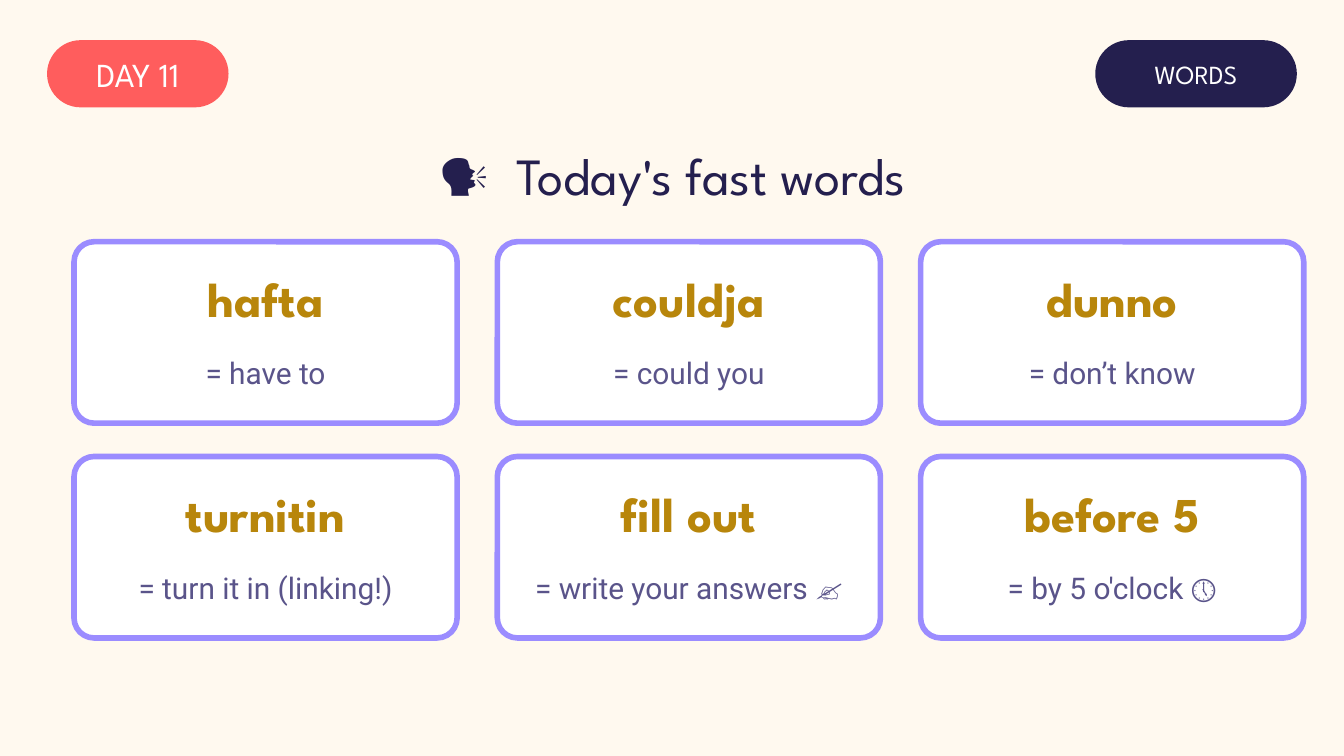
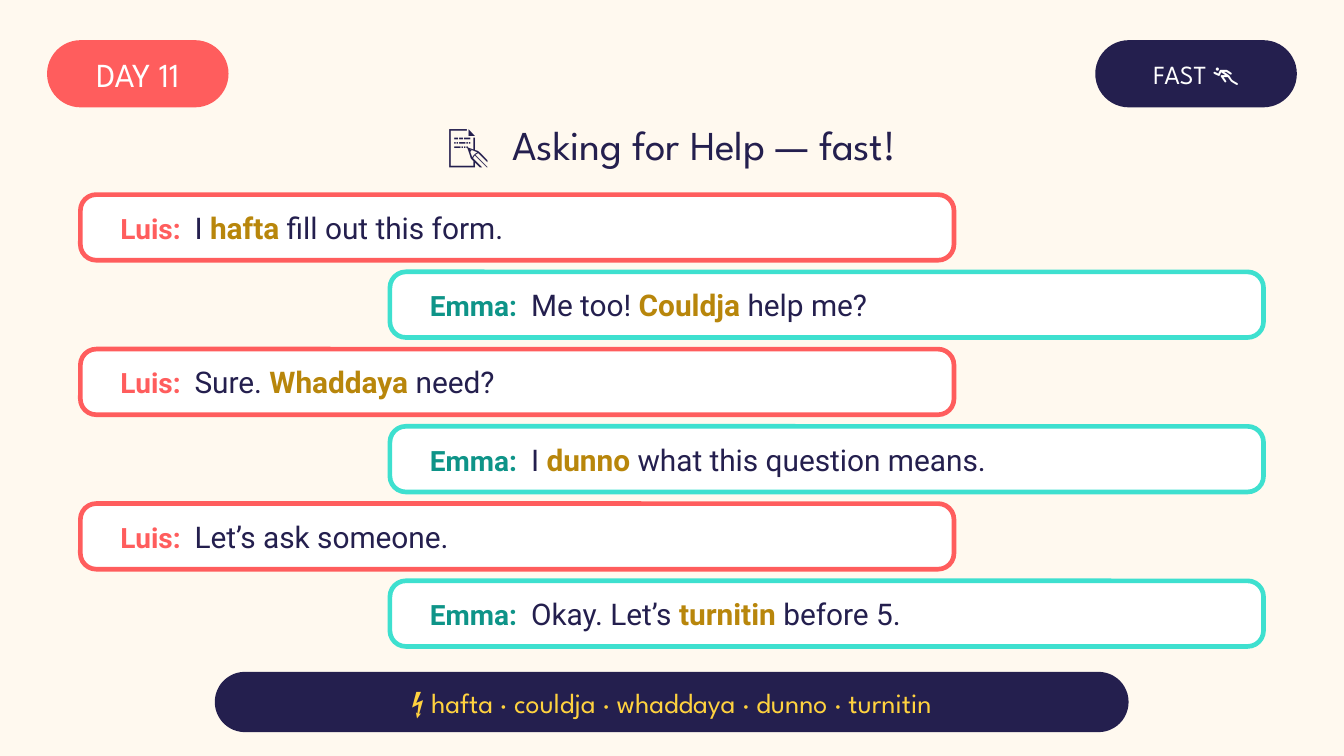
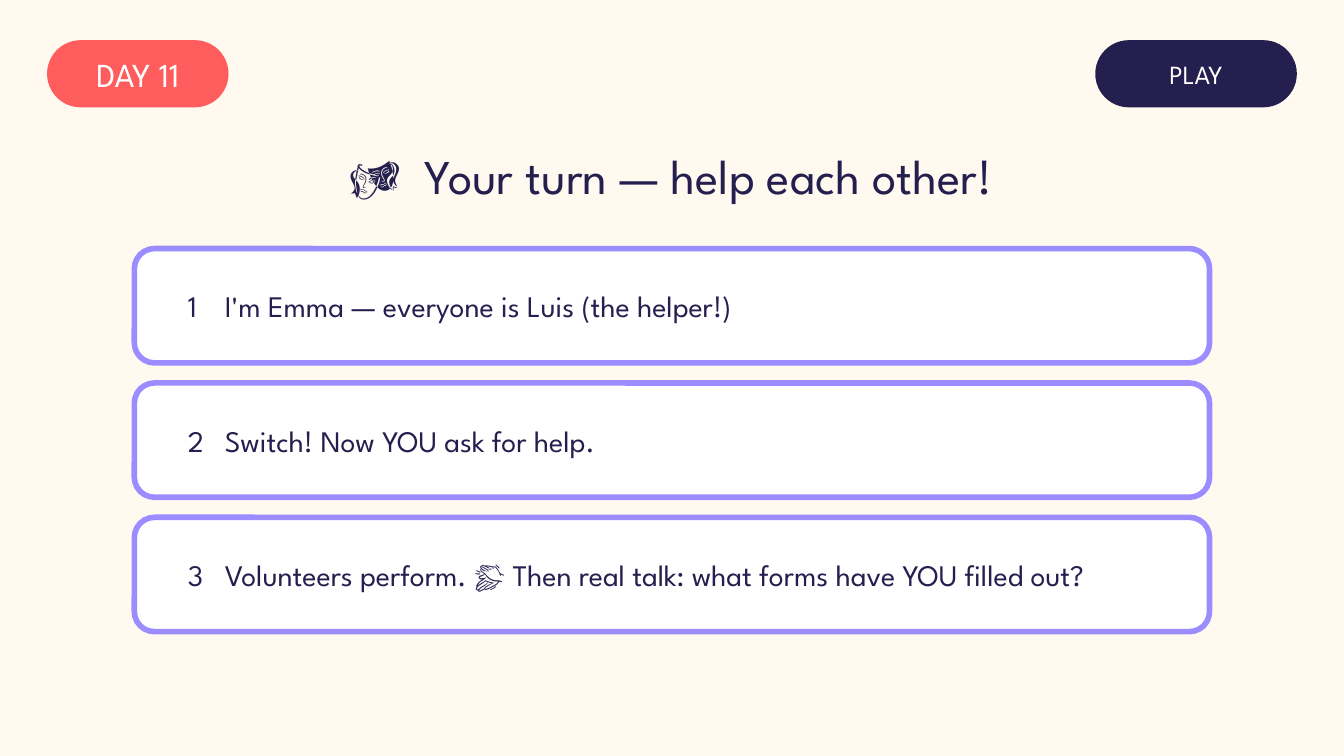
from lxml import etree
from pptx import Presentation
from pptx import util as u
from pptx.dml.color import RGBColor
from pptx.enum import shapes, text
from pptx.oxml.ns import qn

CREAM = RGBColor(0xFF, 0xF9, 0xEF)
WHITE = RGBColor(0xFF, 0xFF, 0xFF)
CORAL = RGBColor(0xFF, 0x5D, 0x5D)
NAVY = RGBColor(0x24, 0x1F, 0x4E)
LILAC = RGBColor(0x9B, 0x8C, 0xFF)
GOLD = RGBColor(0xB8, 0x86, 0x0B)
YELLOW = RGBColor(0xFF, 0xD2, 0x3F)
PURPLE = RGBColor(0x5A, 0x54, 0x8A)
AQUA = RGBColor(0x3E, 0xE0, 0xCF)
TEAL = RGBColor(0x0E, 0x94, 0x88)

HEADING_FONT = "League Spartan"
BODY_FONT = "Roboto"
CENTER = text.PP_ALIGN.CENTER
LEFT = text.PP_ALIGN.LEFT
CORNER_RADIUS = 0.38
ICON_GAP = 700

WORDS = [
    ("hafta", "= have to"),
    ("couldja", "= could you"),
    ("dunno", "= don’t know"),
    ("turnitin", "= turn it in (linking!)"),
    ("fill out", "= write your answers ✍️"),
    ("before 5", "= by 5 o'clock 🕔"),
]
SPEAKERS = {
    "Luis": (1.52, CORAL, CORAL, 1.4),
    "Emma": (7.37, AQUA, TEAL, 1.91),
}
DIALOGUE = [
    ("Luis", "I *hafta* fill out this form."),
    ("Emma", "Me too! *Couldja* help me?"),
    ("Luis", "Sure. *Whaddaya* need?"),
    ("Emma", "I *dunno* what this question means."),
    ("Luis", "Let’s ask someone."),
    ("Emma", "Okay. Let’s *turnitin* before 5."),
]
STEPS = [
    "I'm Emma — everyone is Luis (the helper!)",
    "Switch! Now YOU ask for help.",
    "Volunteers perform. 👏 Then real talk: what forms have YOU filled out?",
]


def place(box):
    return [u.Cm(length) for length in box]


def style_font(font, size, color, bold=False, name=None):
    font.size = u.Pt(size)
    font.color.rgb = color
    font.bold = bold
    if name:
        font.name = name


def prepare_paragraph(shape, alignment, size, color, name=HEADING_FONT, bold=False, tab=None):
    frame = shape.text_frame
    frame.word_wrap = True
    frame.auto_size = text.MSO_AUTO_SIZE.NONE
    frame.vertical_anchor = text.MSO_ANCHOR.MIDDLE
    paragraph = frame.paragraphs[0]
    paragraph.alignment = alignment
    if tab:
        properties = paragraph._p.get_or_add_pPr()
        tab_list = etree.SubElement(properties, qn("a:tabLst"))
        etree.SubElement(tab_list, qn("a:tab"), pos=str(u.Cm(tab)), algn="l")
    style_font(paragraph.font, size, color, bold, name)
    return paragraph


def add_run(paragraph, content):
    run = paragraph.add_run()
    run.text = content
    return run


def add_rounded(slide, box, radius, fill, line=None, line_width=3):
    shape = slide.shapes.add_shape(shapes.MSO_SHAPE.ROUNDED_RECTANGLE, *place(box))
    shape.adjustments[0] = min(0.5, radius / box[3])
    shape.shadow.inherit = False
    shape.fill.solid()
    shape.fill.fore_color.rgb = fill
    if line is None:
        shape.line.fill.background()
    else:
        shape.line.color.rgb = line
        shape.line.width = u.Pt(line_width)
    return shape


def add_pill(slide, box, label, fill, size, color=WHITE):
    pill = add_rounded(slide, box, box[3] / 2, fill)
    frame = pill.text_frame
    frame.margin_left = frame.margin_right = frame.margin_top = frame.margin_bottom = 0
    add_run(prepare_paragraph(pill, CENTER, size, color), label)


def add_label(slide, box, content, *style, **options):
    label = slide.shapes.add_textbox(*place(box))
    add_run(prepare_paragraph(label, CENTER, *style, **options), content)


def add_lesson_slide(presentation, badge, icon, heading, title_box, title_size):
    slide = presentation.slides.add_slide(presentation.slide_layouts[5])
    add_pill(slide, (0.89, 0.76, 3.43, 1.27), "DAY 11", CORAL, 18)
    add_pill(slide, (20.7, 0.76, 3.81, 1.27), badge, NAVY, 14)
    title = slide.shapes.title
    title.left, title.top, title.width, title.height = place(title_box)
    paragraph = prepare_paragraph(title, CENTER, title_size, NAVY)
    add_run(paragraph, icon)
    gap = add_run(paragraph, " ")
    gap.font._element.set("spc", str(ICON_GAP))
    add_run(paragraph, heading)
    return slide


def add_word_card(slide, box, word, meaning):
    left, top, width, height = box
    add_rounded(slide, box, CORNER_RADIUS, WHITE, LILAC)
    add_label(slide, (left, top + 0.3, width, 1.52), word, 26, GOLD, bold=True)
    add_label(slide, (left, top + 1.9, width, 1.14), meaning, 16, PURPLE, name=BODY_FONT)


def add_word_grid(slide, left, top):
    for index, (word, meaning) in enumerate(WORDS):
        row, column = divmod(index, 3)
        box = (left + 8 * column, top + 4.06 * row, 7.24, 3.43)
        add_word_card(slide, box, word, meaning)


def add_bubble(slide, top, speaker, line):
    left, outline, name_color, tab = SPEAKERS[speaker]
    bubble = add_rounded(slide, (left, top, 16.51, 1.24), 0.3, WHITE, outline, 2.5)
    bubble.text_frame.margin_left = u.Cm(0.67)
    paragraph = prepare_paragraph(bubble, LEFT, 16, NAVY, BODY_FONT, tab=tab)
    style_font(add_run(paragraph, f"{speaker}:\t").font, 15, name_color, True)
    for index, part in enumerate(line.split("*")):
        run = add_run(paragraph, part)
        if index % 2:
            style_font(run.font, 16, GOLD, True)


def add_dialogue(slide, top):
    for index, (speaker, line) in enumerate(DIALOGUE):
        add_bubble(slide, top + 1.46 * index, speaker, line)


def add_steps(slide, left, top):
    for index, step in enumerate(STEPS):
        box = (left, top + 2.54 * index, 20.32, 2.16)
        card = add_rounded(slide, box, CORNER_RADIUS, WHITE, LILAC)
        card.text_frame.margin_left = u.Cm(0.9)
        paragraph = prepare_paragraph(card, LEFT, 16, NAVY, tab=0.7)
        add_run(paragraph, f"{index + 1}\t{step}")


def main():
    presentation = Presentation()
    presentation.slide_width = u.Cm(25.4)
    presentation.slide_height = u.Cm(14.29)
    background = presentation.slide_master.background.fill
    background.solid()
    background.fore_color.rgb = CREAM

    title_box = (0, 2.41, 25.4, 1.78)
    words = add_lesson_slide(presentation, "WORDS", "🗣️", "Today's fast words", title_box, 28)
    add_word_grid(words, 1.4, 4.57)

    fast = add_lesson_slide(presentation, "FAST 🏃", "📝", "Asking for Help — fast!",
                            (0, 2.08, 25.4, 1.27), 22)
    add_dialogue(fast, 3.68)
    add_pill(fast, (4.06, 12.7, 17.27, 1.14),
             "⚡ hafta · couldja · whaddaya · dunno · turnitin", NAVY, 15, YELLOW)

    play = add_lesson_slide(presentation, "PLAY", "🎭", "Your turn — help each other!", title_box, 26)
    add_steps(play, 2.54, 4.7)

    presentation.save("out.pptx")


if __name__ == "__main__":
    main()
